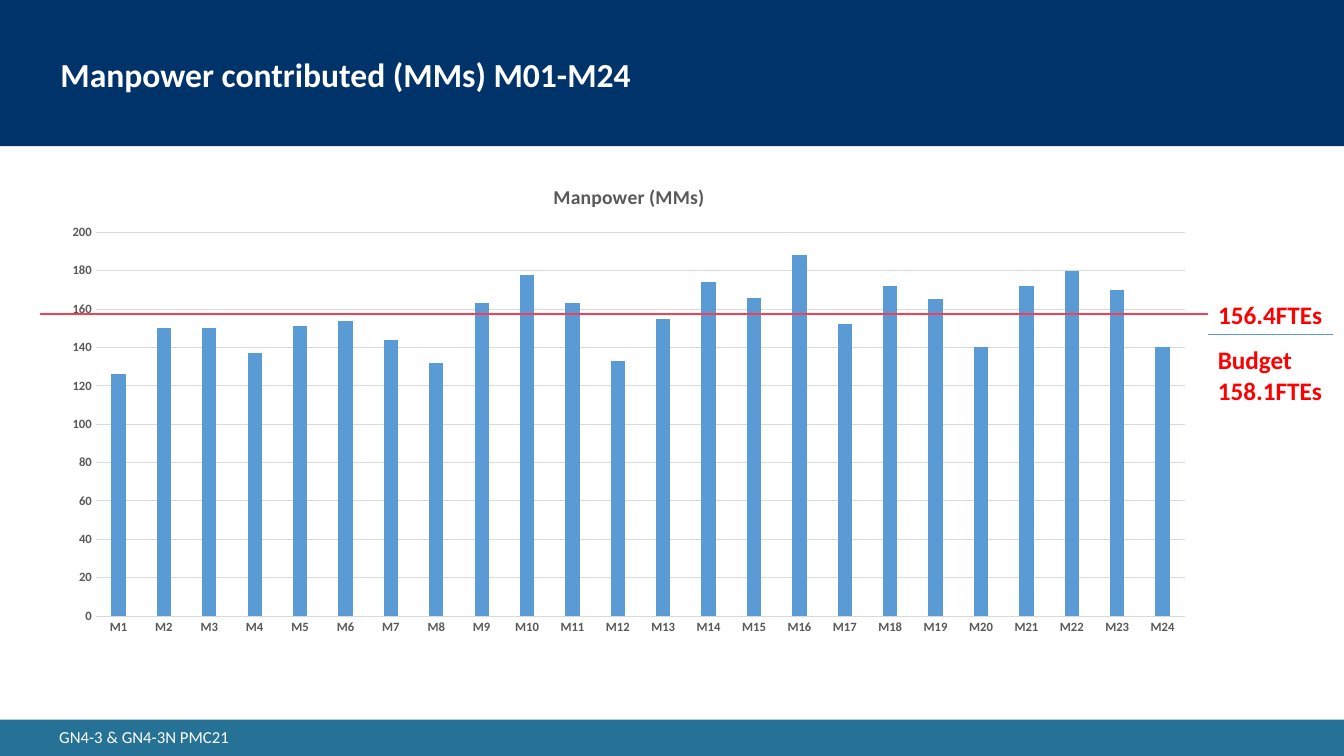
from dataclasses import dataclass
import lxml.etree
import pptx
import pptx.chart.data
import pptx.dml.color
import pptx.enum.chart
import pptx.enum.shapes
import pptx.enum.text
import pptx.oxml.ns
import pptx.util

Pt = pptx.util.Pt
FACE = "Calibri"
NAME = "Manpower (MMs)"
VALUES = (126, 150, 150, 137, 151, 154, 144, 132, 163, 178, 163, 133,
          155, 174, 166, 188, 152, 172, 165, 140, 172, 180, 170, 140)
PLOT = {"x": 0.04, "y": 0.14, "w": 0.94, "h": 0.8}


@dataclass
class Band:
    left: float
    top: float
    width: float
    height: float
    fill: str


@dataclass
class Rule:
    left: float
    right: float
    top: float
    color: str
    weight: float


@dataclass
class Label:
    left: float
    top: float
    width: float
    height: float
    lines: tuple
    size: float
    color: str
    bold: bool
    anchor: object


TOP = pptx.enum.text.MSO_ANCHOR.TOP
MIDDLE = pptx.enum.text.MSO_ANCHOR.MIDDLE
BANDS = (Band(0, -3, 960, 107.5, "00336A"), Band(-3, 514, 963, 26, "267296"))
RULES = (Rule(28.4, 863, 224.5, "F83E54", 1.5), Rule(863, 952, 239, "5B9BD5", 0.5))
LABELS = (
    Label(35.2, 515.5, 137.5, 21.8, ("GN4-3 & GN4-3N PMC21",), 12, "FFFFFF", False, MIDDLE),
    Label(863, 210.5, 89, 29, ("156.4FTEs",), 18, "FF0000", True, TOP),
    Label(862.8, 242.6, 89, 51, ("Budget", "158.1FTEs"), 18, "FF0000", True, TOP),
)


def paint(color: object, code: str) -> None:
    color.rgb = pptx.dml.color.RGBColor.from_string(code)


def apply(target: object, values: dict) -> None:
    for key, value in values.items():
        setattr(target, key, value)


def style(font: object, size: float, code: str, bold: bool) -> None:
    apply(font, {"name": FACE, "size": Pt(size), "bold": bold})
    paint(font.color, code)


def stroke(line: object, code: str, weight: float) -> None:
    line.width = Pt(weight)
    line.fill.solid()
    paint(line.fill.fore_color, code)


def add_band(slide: object, band: Band) -> None:
    shape = slide.shapes.add_shape(
        pptx.enum.shapes.MSO_SHAPE.RECTANGLE,
        Pt(band.left), Pt(band.top), Pt(band.width), Pt(band.height))
    shape.shadow.inherit = False
    shape.fill.solid()
    paint(shape.fill.fore_color, band.fill)
    shape.line.fill.background()


def add_rule(slide: object, rule: Rule) -> None:
    line = slide.shapes.add_connector(
        pptx.enum.shapes.MSO_CONNECTOR.STRAIGHT,
        Pt(rule.left), Pt(rule.top), Pt(rule.right), Pt(rule.top))
    stroke(line.line, rule.color, rule.weight)
    lxml.etree.SubElement(line.element.spPr, pptx.oxml.ns.qn("a:effectLst"))


def add_label(slide: object, label: Label) -> None:
    box = slide.shapes.add_textbox(
        Pt(label.left), Pt(label.top), Pt(label.width), Pt(label.height))
    frame = box.text_frame
    apply(frame, {
        "text": "\n".join(label.lines),
        "word_wrap": False,
        "auto_size": pptx.enum.text.MSO_AUTO_SIZE.SHAPE_TO_FIT_TEXT,
        "vertical_anchor": label.anchor,
    })
    for para in frame.paragraphs:
        style(para.font, label.size, label.color, label.bold)


def set_title(slide: object) -> None:
    title = slide.shapes.title
    apply(title, {"left": Pt(36), "top": Pt(16), "width": Pt(738), "height": Pt(74)})
    frame = title.text_frame
    apply(frame, {
        "text": "Manpower contributed (MMs) M01-M24",
        "word_wrap": True,
        "auto_size": pptx.enum.text.MSO_AUTO_SIZE.NONE,
        "vertical_anchor": MIDDLE,
    })
    para = frame.paragraphs[0]
    para.alignment = pptx.enum.text.PP_ALIGN.LEFT
    style(para.font, 24, "FFFFFF", True)
    # Bring the title in front of the header band
    title.element.getparent().append(title.element)


def set_plot(chart: object) -> None:
    qn = pptx.oxml.ns.qn
    area = chart.element.find(".//" + qn("c:plotArea"))
    for old in area.findall(qn("c:layout")):
        area.remove(old)
    layout = lxml.etree.Element(qn("c:layout"))
    manual = lxml.etree.SubElement(layout, qn("c:manualLayout"))
    parts = {"layoutTarget": "inner", "xMode": "edge", "yMode": "edge", **PLOT}
    for tag, value in parts.items():
        lxml.etree.SubElement(manual, qn("c:" + tag)).set("val", str(value))
    area.insert(0, layout)


def add_chart(slide: object) -> None:
    enum = pptx.enum.chart
    data = pptx.chart.data.CategoryChartData()
    data.categories = [f"M{month}" for month in range(1, len(VALUES) + 1)]
    data.add_series(NAME, VALUES)
    chart = slide.shapes.add_chart(
        enum.XL_CHART_TYPE.COLUMN_CLUSTERED,
        Pt(35.3), Pt(118), Pt(828), Pt(342.7), data).chart
    style(chart.font, 10, "000000", False)
    apply(chart, {"has_legend": False, "has_title": True})
    head = chart.chart_title
    head.include_in_layout = False
    head.text_frame.text = NAME
    style(head.text_frame.paragraphs[0].runs[0].font, 14, "595959", True)

    # Columns
    plot = chart.plots[0]
    apply(plot, {"gap_width": 219, "overlap": -27, "vary_by_categories": False})
    fill = plot.series[0].format.fill
    fill.solid()
    paint(fill.fore_color, "5B9BD5")

    # Axes
    months, scale = chart.category_axis, chart.value_axis
    for axis in (months, scale):
        apply(axis, {"major_tick_mark": enum.XL_TICK_MARK.NONE,
                     "minor_tick_mark": enum.XL_TICK_MARK.NONE})
        style(axis.tick_labels.font, 9, "595959", True)
    apply(scale, {"minimum_scale": 0, "maximum_scale": 200, "major_unit": 20,
                  "has_major_gridlines": True})
    scale.format.line.fill.background()
    for line in (months.format.line, scale.major_gridlines.format.line):
        stroke(line, "D9D9D9", 0.75)
    set_plot(chart)


def main() -> None:
    deck = pptx.Presentation()
    apply(deck, {"slide_width": Pt(960), "slide_height": Pt(540)})
    slide = deck.slides.add_slide(deck.slide_layouts.get_by_name("Title Only"))
    for band in BANDS:
        add_band(slide, band)
    set_title(slide)
    add_chart(slide)
    for rule in RULES:
        add_rule(slide, rule)
    for label in LABELS:
        add_label(slide, label)
    deck.save("out.pptx")


if __name__ == "__main__":
    main()
